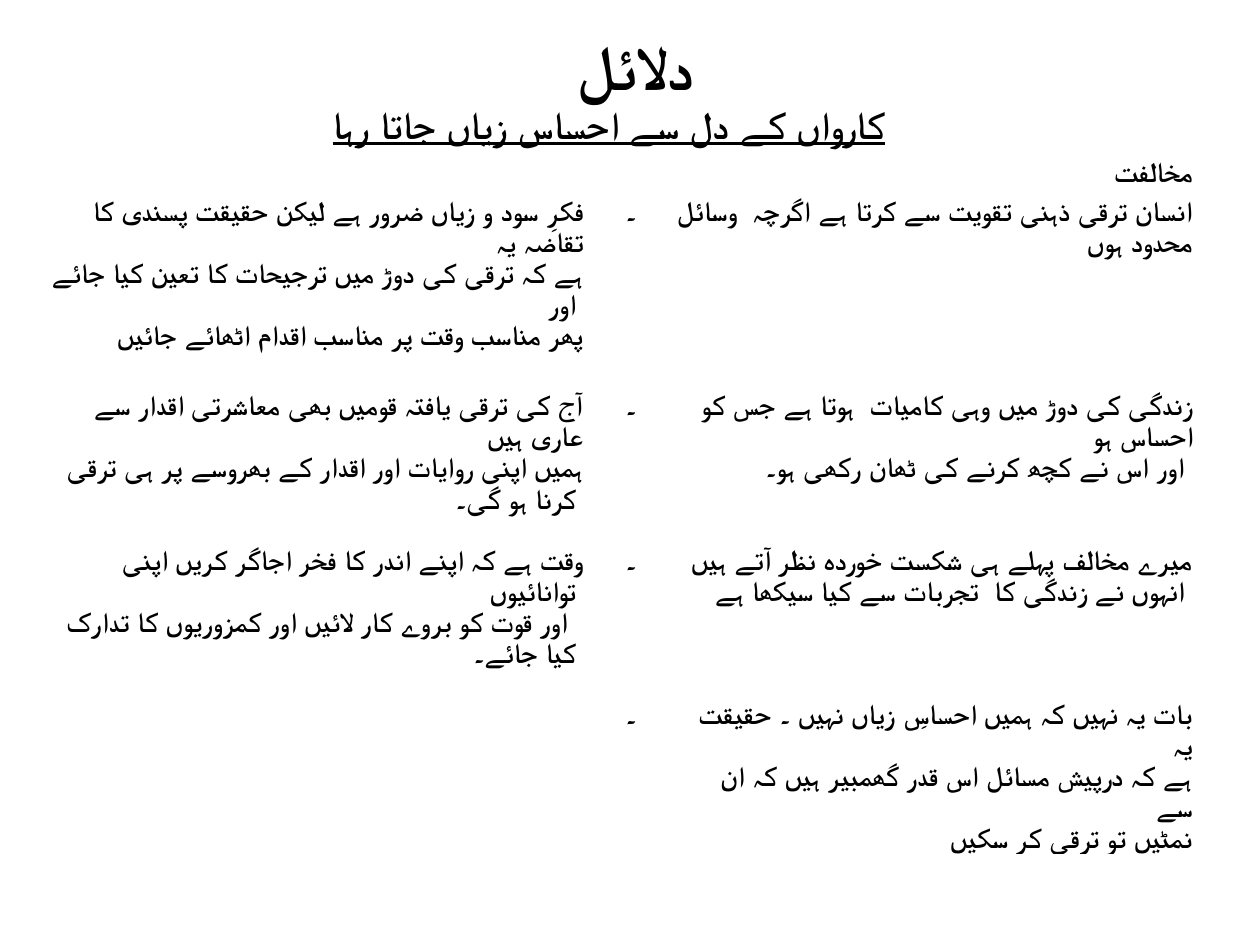
from lxml.etree import SubElement
from pptx import Presentation
from pptx.dml.color import RGBColor
from pptx.enum.text import MSO_ANCHOR, PP_ALIGN
from pptx.oxml.ns import qn
from pptx.util import Pt

PX = 7620  # EMU per px, 120 px to the inch
BLACK = RGBColor(0, 0, 0)

TITLE = "دلائل"
SUBTITLE = "کارواں کے دل سے احساس زیاں جاتا رہا"
HEADING = "مخالفت"
DASH = "۔"

# (reply, argument): each a list of paragraphs
ARGUMENTS = [
    (["فکرِ سود و زیاں ضرور ہے لیکن حقیقت پسندی کا تقاضہ یہ\n"
      "ہے کہ ترقی کی دوڑ میں ترجیحات کا تعین کیا جائے  اور ",
      "پھر مناسب وقت پر مناسب اقدام اٹھائے جائیں"],
     ["انسان ترقی ذہنی تقویت سے کرتا ہے اگرچہ  وسائل ",
      "محدود ہوں"]),
    (["آج کی ترقی یافتہ قومیں بھی معاشرتی اقدار سے عاری ہیں",
      "ہمیں اپنی روایات اور اقدار کے بھروسے پر ہی ترقی",
      "کرنا ہو گی۔ "],
     ["زندگی کی دوڑ میں وہی کامیات  ہوتا ہے جس کو احساس ہو",
      "اور اس نے کچھ کرنے کی ٹھان رکھی ہو۔ "]),
    (["وقت ہے کہ اپنے اندر کا فخر اجاگر کریں اپنی توانائیوں ",
      "اور قوت کو بروے کار لائیں اور کمزوریوں کا تدارک  ",
      "کیا جائے۔ "],
     ["میرے مخالف پہلے ہی شکست خوردہ نظر آتے ہیں",
      " انہوں نے زندگی کا  تجربات سے کیا سیکھا ہے "]),
    ([],
     ["بات یہ نہیں کہ ہمیں احساسِ زیاں نہیں ۔ حقیقت یہ",
      "ہے کہ درپیش مسائل اس قدر گھمبیر ہیں کہ ان سے\n"
      "نمٹیں تو ترقی کر سکیں"]),
]
COLUMN_WIDTHS = [530, 50, 30, 500]
ROW_HEIGHTS = [37, 185, 147, 147, 147]


def format_runs(paragraph, size, typeface, underline=None):
    for run in paragraph.runs:
        font = run.font
        font.size, font.name = Pt(size), typeface
        font.bold, font.underline = True, underline
        font.color.rgb = BLACK
        # Urdu letters take the complex-script typeface
        SubElement(font._element, qn("a:cs"), typeface="Arial")


def place_heading(placeholder, text, box, anchor, size, typeface, underline=None):
    placeholder.left, placeholder.top, placeholder.width, placeholder.height = (
        n * PX for n in box)
    frame = placeholder.text_frame
    frame.text = text
    frame.word_wrap = True
    frame.vertical_anchor = anchor
    paragraph = frame.paragraphs[0]
    paragraph.alignment = PP_ALIGN.CENTER
    paragraph.space_before = Pt(0)
    format_runs(paragraph, size, typeface, underline)


def fill_cell(cell, lines, right_to_left):
    cell.fill.background()
    cell.margin_left = cell.margin_right = 4 * PX
    cell.margin_top = cell.margin_bottom = 0
    frame = cell.text_frame
    for i, line in enumerate(lines or [""]):
        paragraph = frame.add_paragraph() if i else frame.paragraphs[0]
        paragraph.text = line
        paragraph.alignment = PP_ALIGN.RIGHT
        paragraph.line_spacing = 1.0
        if right_to_left:
            paragraph._p.get_or_add_pPr().set("rtl", "1")
        format_runs(paragraph, 16, "Calibri")
        if not line:  # keeps an empty cell from stretching its row
            SubElement(paragraph._p, qn("a:endParaRPr"), sz="1600")


def add_arguments(slide):
    rows = [([], [], [], [HEADING])]
    rows += [(reply, [DASH], [], argument) for reply, argument in ARGUMENTS]
    table = slide.shapes.add_table(
        len(rows), len(COLUMN_WIDTHS), 30 * PX, 150 * PX,
        sum(COLUMN_WIDTHS) * PX, sum(ROW_HEIGHTS) * PX).table
    table.first_row = table.horz_banding = False
    for column, width in zip(table.columns, COLUMN_WIDTHS):
        column.width = width * PX
    for row, height, contents in zip(table.rows, ROW_HEIGHTS, rows):
        row.height = height * PX
        for cell, lines in zip(row.cells, contents):
            fill_cell(cell, lines, lines in ([HEADING], [DASH]))


def main():
    prs = Presentation()
    prs.slide_width, prs.slide_height = 1200 * PX, 900 * PX
    slide = prs.slides.add_slide(prs.slide_layouts[0])
    place_heading(slide.shapes.title, TITLE, (90, 20, 1030, 85),
                  MSO_ANCHOR.TOP, 36, "Calibri")
    place_heading(slide.placeholders[1], SUBTITLE, (90, 90, 980, 56),
                  MSO_ANCHOR.MIDDLE, 22, "Arial", True)
    add_arguments(slide)
    prs.save("out.pptx")


if __name__ == "__main__":
    main()
